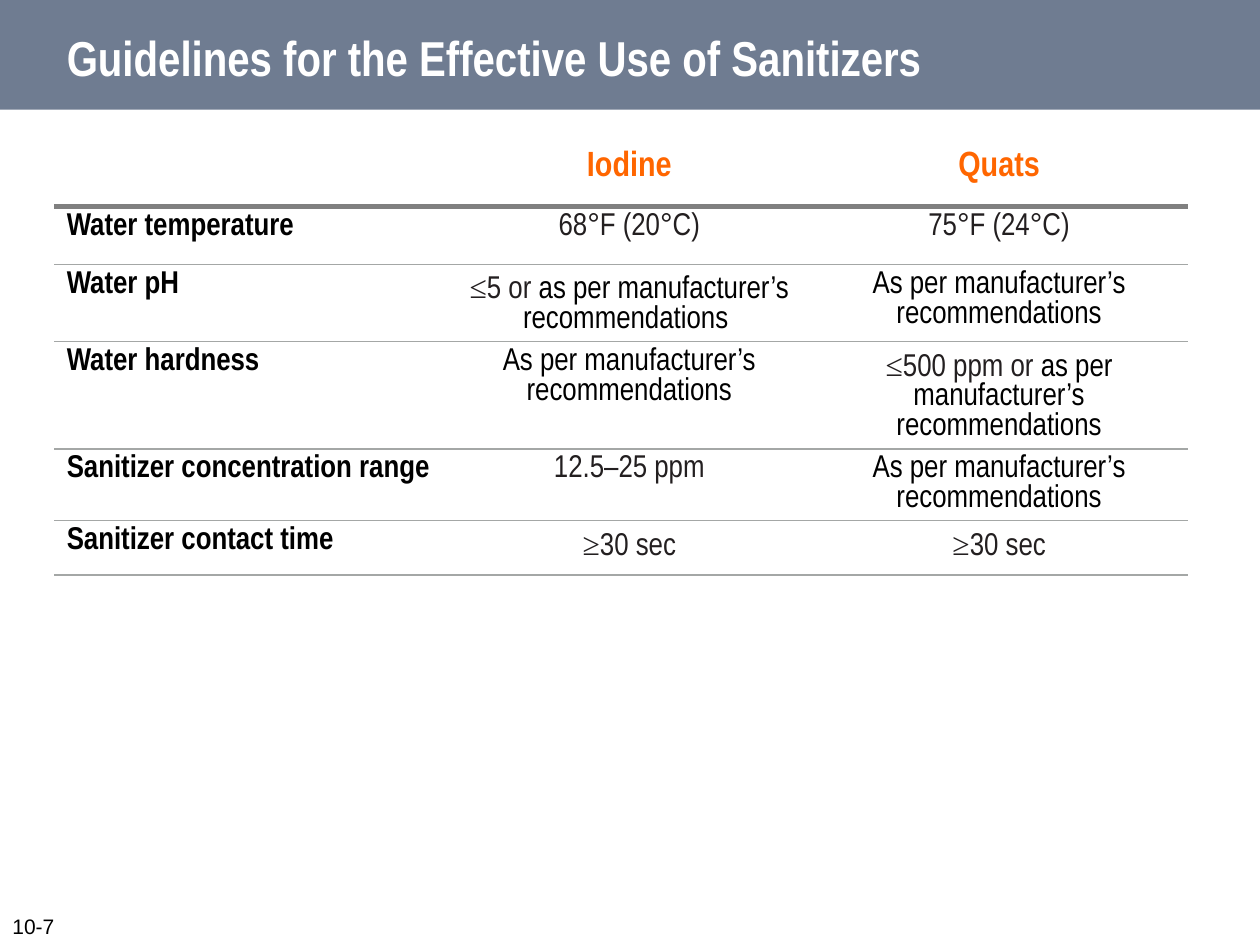
from lxml import etree
from pptx import Presentation
from pptx.dml.color import RGBColor
from pptx.enum.shapes import MSO_SHAPE
from pptx.enum.text import MSO_ANCHOR, PP_ALIGN
from pptx.oxml.ns import qn
from pptx.util import Inches, Pt

RECTANGLE = MSO_SHAPE.RECTANGLE
MIDDLE, BOTTOM = MSO_ANCHOR.MIDDLE, MSO_ANCHOR.BOTTOM
LEFT, CENTER = PP_ALIGN.LEFT, PP_ALIGN.CENTER
TITLE_ONLY = 5

COLORS = {
    "banner": "6F7C91",
    "white": "FFFFFF",
    "heading": "FF6600",
    "black": "000000",
    "value": "231F20",
    "head_rule": "808080",
    "row_rule": "A4A7A6",
}
NARROW, SYMBOL, PLAIN = "Arial Narrow", "Times New Roman", "Arial"

COLUMN_WIDTHS = [3.13, 2.87, 3]
ROW_HEIGHTS = [0.39, 0.46, 0.61, 0.85, 0.57, 0.43]
HEADINGS = ["", "Iodine", "Quats"]
ADVICE = "As per manufacturer’s recommendations"
# Each value is a pair: the measured part, then the advice part.
ROWS = [
    ("Water temperature", ("68°F (20°C)", ""), ("75°F (24°C)", "")),
    ("Water pH", ("≤5 or ", "as per manufacturer’s recommendations "), ("", ADVICE)),
    ("Water hardness", ("", ADVICE),
     ("≤500 ppm or ", "as per manufacturer’s recommendations")),
    ("Sanitizer concentration range", ("12.5–25 ppm", ""), ("", ADVICE)),
    ("Sanitizer contact time", ("≥30 sec", ""), ("≥30 sec", "")),
]


def rgb(name):
    return RGBColor.from_string(COLORS[name])


def style_font(font, size, color, name=NARROW, bold=False):
    font.name, font.size, font.bold = name, Pt(size), bold
    font.color.rgb = rgb(color)


def set_borders(cell, top, bottom):
    """Rule a cell above and below; each rule is (colour, points) or None."""
    properties = cell._tc.get_or_add_tcPr()
    sides = [("a:lnL", None), ("a:lnR", None), ("a:lnT", top), ("a:lnB", bottom)]
    for position, (tag, rule) in enumerate(sides):
        line = etree.Element(qn(tag))
        if rule:
            color, points = rule
            line.set("w", str(Pt(points)))
            fill = etree.SubElement(line, qn("a:solidFill"))
            etree.SubElement(fill, qn("a:srgbClr"), val=COLORS[color])
        else:
            etree.SubElement(line, qn("a:noFill"))
        properties.insert(position, line)


def add_span(para, text, color, name=NARROW):
    if text:
        span = para.add_run()
        span.text = text
        style_font(span.font, 18, color, name)


def fill_value(para, measured, advice):
    """Write a value, with any leading comparison sign in the symbol font."""
    para.alignment = CENTER
    sign = measured[:1] if measured[:1] in ("≤", "≥") else ""
    add_span(para, sign, "value", SYMBOL)
    add_span(para, measured[len(sign):], "value")
    add_span(para, advice, "black")


def fill_label(para, text, size, color, alignment):
    para.text = text
    para.alignment = alignment
    style_font(para.font, size, color, bold=True)


def add_banner(page, left, top, width, height):
    banner = page.shapes.add_shape(RECTANGLE, left, top, width, height)
    banner.shadow.inherit = False
    banner.fill.solid()
    banner.fill.fore_color.rgb = rgb("banner")
    banner.line.fill.background()

    title = page.shapes.title
    title.element.addprevious(banner.element)
    title.left, title.top = left + Inches(0.43), top + Inches(0.17)
    title.width, title.height = Inches(9.09), Inches(0.57)
    frame = title.text_frame
    frame.vertical_anchor = MIDDLE
    fill_label(frame.paragraphs[0], "Guidelines for the Effective Use of Sanitizers",
               28, "white", LEFT)


def add_guidelines(page, left, top, width, height):
    table = page.shapes.add_table(len(ROW_HEIGHTS), len(COLUMN_WIDTHS),
                                  left, top, width, height).table
    table.first_row = table.horz_banding = False
    for column, size in zip(table.columns, COLUMN_WIDTHS):
        column.width = Inches(size)
    for row, size in zip(table.rows, ROW_HEIGHTS):
        row.height = Inches(size)

    head_rule, row_rule = ("head_rule", 3), ("row_rule", 1)
    rules = [None, head_rule] + [row_rule] * len(ROWS)
    for index, (row, content) in enumerate(zip(table.rows, [HEADINGS] + ROWS)):
        for column, (cell, value) in enumerate(zip(row.cells, content)):
            cell.fill.solid()
            cell.fill.fore_color.rgb = rgb("white")
            set_borders(cell, rules[index], rules[index + 1])
            para = cell.text_frame.paragraphs[0]
            if index == 0:
                fill_label(para, value, 20, "heading", CENTER)
                para.line_spacing = 0.5
            elif column == 0:
                fill_label(para, value, 18, "black", LEFT)
            else:
                fill_value(para, *value)


def add_page_number(page, left, top, width, height):
    box = page.shapes.add_textbox(left, top, width, height)
    frame = box.text_frame
    frame.word_wrap = True
    frame.vertical_anchor = BOTTOM
    para = frame.paragraphs[0]
    para.text = "10-7"
    style_font(para.font, 12, "black", PLAIN)


def main():
    deck = Presentation()
    deck.slide_width, deck.slide_height = Inches(10), Inches(7.5)
    page = deck.slides.add_slide(deck.slide_layouts[TITLE_ONLY])
    add_banner(page, 0, 0, deck.slide_width, Inches(0.87))
    add_guidelines(page, Inches(0.43), Inches(1.25),
                   Inches(sum(COLUMN_WIDTHS)), Inches(sum(ROW_HEIGHTS)))
    add_page_number(page, 0, Inches(7.2), Inches(0.62), Inches(0.3))
    deck.save("out.pptx")


if __name__ == "__main__":
    main()
